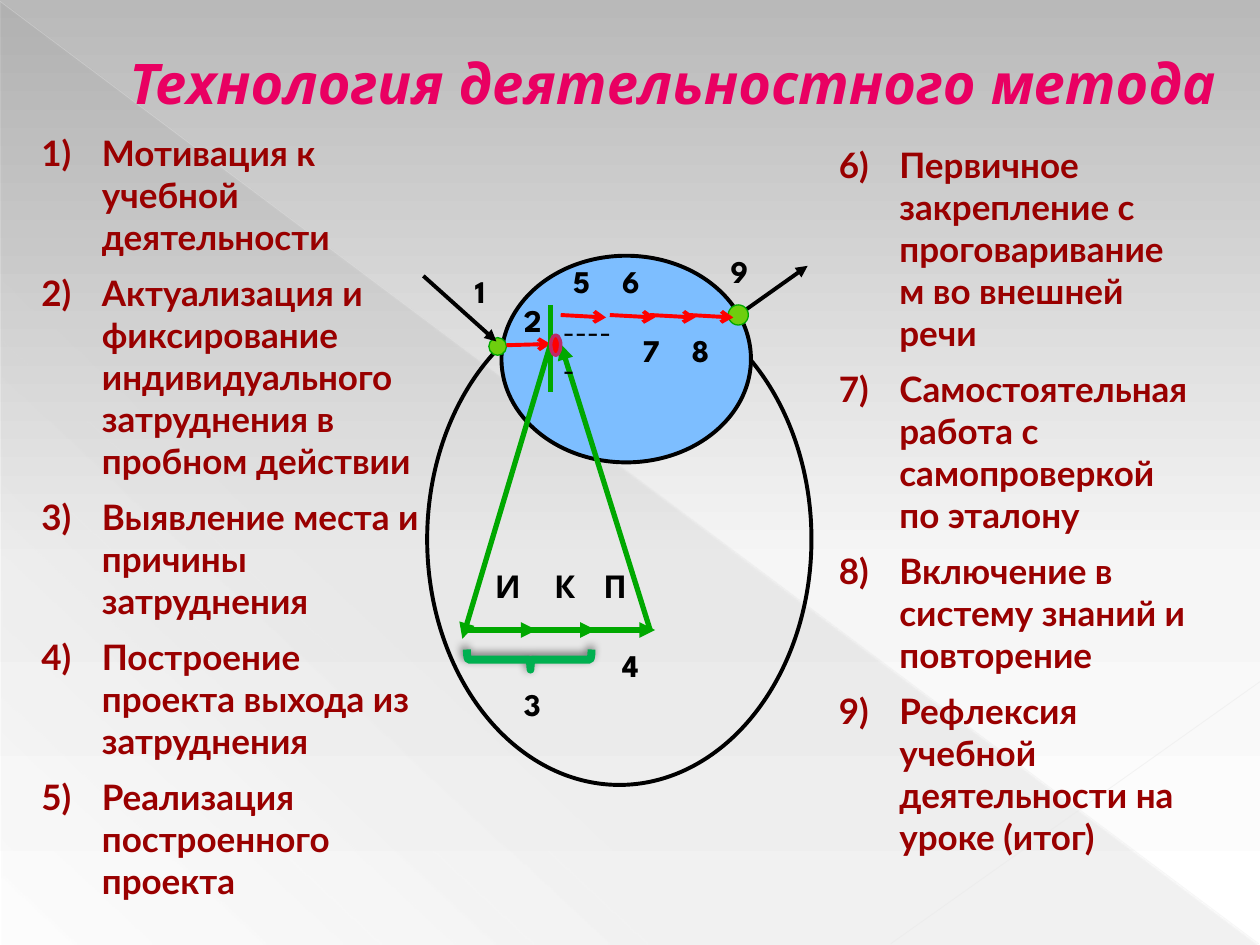
from dataclasses import dataclass

import pptx
import pptx.dml.color
import pptx.enum.dml
import pptx.enum.shapes
import pptx.enum.text
import pptx.oxml
import pptx.oxml.ns
import pptx.util

SCALE = 9144
SHAPE = pptx.enum.shapes.MSO_SHAPE
ANCHOR = pptx.enum.text.MSO_ANCHOR
NS = pptx.oxml.ns.nsdecls("a")


def px(n):
    return pptx.util.Emu(n * SCALE)


def rgb(value):
    return pptx.dml.color.RGBColor.from_string(value)


@dataclass(frozen=True)
class Theme:
    display: str = "League Spartan"
    body: str = "Lato"
    title_size: int = 32
    body_size: int = 20
    label_size: int = 18
    title: str = "E90062"
    text: str = "990000"
    ink: str = "000000"
    blue: str = "7DBEFF"
    lime: str = "6ECE0E"
    green: str = "00A800"
    brace: str = "00B050"
    red: str = "FF0000"
    pink: str = "BD2968"
    shade: str = "666666"
    ray: str = "E8E8E8"
    backdrop: tuple = ((0, "B9B9B9", 100), (60, "F6F6F6", 100), (100, "FFFFFF", 100))


class Board:
    def __init__(self, slide, theme):
        self.s = slide
        self.theme = theme

    def gradient(self, fill, owner, stops, angle):
        fill.gradient()
        grad = owner.find(".//" + pptx.oxml.ns.qn("a:gradFill"))
        gs = "".join(
            f'<a:gs pos="{pos * 1000}"><a:srgbClr val="{color}">'
            f'<a:alpha val="{alpha * 1000}"/></a:srgbClr></a:gs>'
            for pos, color, alpha in stops
        )
        grad.getparent().replace(grad, pptx.oxml.parse_xml(
            f'<a:gradFill {NS} rotWithShape="1"><a:gsLst>{gs}</a:gsLst>'
            f'<a:lin ang="{angle * 60000}" scaled="0"/></a:gradFill>'))

    def background(self):
        self.gradient(self.s.background.fill, self.s._element, self.theme.backdrop, 90)

    def shape(self, kind, x, y, w, h, fill=None, line=None, weight=1):
        sp = self.s.shapes.add_shape(kind, px(x), px(y), px(w), px(h))
        sp.shadow.inherit = False
        if fill:
            sp.fill.solid()
            sp.fill.fore_color.rgb = rgb(fill)
        else:
            sp.fill.background()
        if line:
            sp.line.color.rgb = rgb(line)
            sp.line.width = pptx.util.Pt(weight)
        else:
            sp.line.fill.background()
        return sp

    def line(self, x1, y1, x2, y2, color, weight, tail=None, alpha=None):
        c = self.s.shapes.add_connector(
            pptx.enum.shapes.MSO_CONNECTOR.STRAIGHT, px(x1), px(y1), px(x2), px(y2))
        c.line.color.rgb = rgb(color)
        c.line.width = pptx.util.Pt(weight)
        ln = c.line._get_or_add_ln()
        if alpha:
            ln.find(".//" + pptx.oxml.ns.qn("a:srgbClr")).append(
                pptx.oxml.parse_xml(f'<a:alpha {NS} val="{alpha * 1000}"/>'))
        if tail:
            ln.append(pptx.oxml.parse_xml(f'<a:tailEnd {NS} type="{tail}"/>'))
        c._element.spPr.append(pptx.oxml.parse_xml(f"<a:effectLst {NS}/>"))

    def run(self, p, text, font, size, color, bold=True, italic=False):
        r = p.add_run()
        r.text = text
        r.font.name = font
        r.font.size = pptx.util.Pt(size)
        r.font.bold = bold
        r.font.italic = italic
        r.font.color.rgb = rgb(color)

    def box(self, x, y, w, h, anchor=ANCHOR.TOP):
        tf = self.s.shapes.add_textbox(px(x), px(y), px(w), px(h)).text_frame
        tf.word_wrap = True
        tf.vertical_anchor = anchor
        return tf

    def label(self, text, x, y, w=31, bold=True):
        t = self.theme
        p = self.box(x, y, w, 40).paragraphs[0]
        self.run(p, text, t.display, t.label_size, t.ink, bold)

    def steps(self, items, first, x, y, w, h, anchor):
        t = self.theme
        tf = self.box(x, y, w, h, anchor)
        for i, item in enumerate(items):
            p = tf.add_paragraph() if i else tf.paragraphs[0]
            p.space_before = pptx.util.Pt(8 if i else 0)
            pPr = p._p.get_or_add_pPr()
            pPr.set("marL", str(px(48)))
            pPr.set("indent", str(px(-48)))
            self.run(p, f"{first + i})\t{item}", t.body, t.body_size, t.text)

    def title(self, text, x, y, w, h):
        t = self.theme
        sp = self.s.shapes.title
        sp.left, sp.top, sp.width, sp.height = px(x), px(y), px(w), px(h)
        self.s.shapes._spTree.append(sp._element)
        tf = sp.text_frame
        tf.word_wrap = True
        tf.auto_size = pptx.enum.text.MSO_AUTO_SIZE.NONE
        tf.vertical_anchor = ANCHOR.MIDDLE
        p = tf.paragraphs[0]
        p.alignment = pptx.enum.text.PP_ALIGN.CENTER
        p._p.get_or_add_pPr().set("marL", str(px(53)))
        self.run(p, text, t.display, t.title_size, t.title, italic=True)

    def brace(self, x, y, w, h):
        sp = self.shape(SHAPE.RIGHT_BRACE, x, y, w, h, line=self.theme.brace, weight=4.5)
        sp.rotation = 90
        sp.adjustments[0] = 0.08
        sp.adjustments[1] = 0.49
        sp._element.spPr.find(pptx.oxml.ns.qn("a:effectLst")).append(pptx.oxml.parse_xml(
            f'<a:outerShdw {NS} blurRad="{pptx.util.Pt(5)}" dist="{pptx.util.Pt(2)}" '
            f'dir="{245 * 60000}"><a:srgbClr val="{self.theme.ink}">'
            '<a:alpha val="50000"/></a:srgbClr></a:outerShdw>'))


def main():
    prs = pptx.Presentation()
    prs.slide_width, prs.slide_height = px(1000), px(750)
    t = Theme()
    b = Board(prs.slides.add_slide(prs.slide_layouts[5]), t)

    b.background()
    sp = b.shape(SHAPE.RIGHT_TRIANGLE, 1, 2, 998, 748)
    b.gradient(sp.fill, sp._element.spPr,
               ((0, t.shade, 10), (70, t.shade, 8), (100, t.shade, 1)), 133)
    b.line(0, 1, 999, 749, t.ray, 0.39, alpha=35)
    b.line(1000, 541, 707, 749, t.ray, 0.47, alpha=45)
    b.title("Технология деятельностного метода", 31, 29, 953, 72)

    b.shape(SHAPE.OVAL, 339, 233, 305, 390, line=t.ink, weight=2.25)
    b.shape(SHAPE.OVAL, 398, 203, 198, 164, t.blue, t.ink, 2.25)
    b.shape(SHAPE.OVAL, 388, 268, 14, 14, t.lime, t.green, 0.75)
    b.line(402, 274, 437, 273, t.red, 2.25, "arrow")
    b.line(437, 242, 437, 311, t.green, 3)
    b.line(437, 273, 367, 507, t.green, 3, "triangle")
    b.line(516, 500, 445, 273, t.green, 3, "triangle")
    for x in range(367, 462, 47):
        b.line(x, 500, x + 59, 500, t.green, 3, "triangle")
    for x in (445, 484, 516):
        b.line(x, 250, x + 36, 252, t.red, 2.25, "arrow")
    b.label("-----", 437, 242, 67, bold=False)
    b.brace(412, 474, 16, 99)
    b.line(586, 250, 641, 211, t.ink, 2.25, "triangle")
    b.line(336, 219, 394, 271, t.ink, 2.25, "triangle")
    b.shape(SHAPE.OVAL, 578, 242, 16, 16, t.lime, t.green, 0.75)
    b.line(547, 250, 582, 252, t.red, 2.25, "arrow")

    for text, x, y in (("1", 367, 211), ("2", 406, 234), ("3", 406, 539),
                       ("4", 484, 508), ("5", 445, 203), ("6", 484, 203),
                       ("7", 500, 258), ("8", 539, 258), ("9", 570, 195),
                       ("И", 383, 445), ("К", 430, 445), ("П", 469, 445)):
        b.label(text, x, y, 40)
    b.shape(SHAPE.FLOWCHART_CONNECTOR, 437, 266, 8, 16, t.red, t.pink, 2)

    b.steps(("Мотивация к учебной деятельности",
             "Актуализация и фиксирование индивидуального затруднения в пробном действии",
             "Выявление места и причины затруднения",
             "Построение проекта выхода из затруднения",
             "Реализация построенного проекта"),
            1, 23, 109, 328, 602, ANCHOR.MIDDLE)
    b.steps(("Первичное закрепление с проговариванием во внешней речи",
             "Самостоятельная работа с самопроверкой по эталону",
             "Включение в систему знаний и повторение",
             "Рефлексия учебной деятельности на уроке (итог)"),
            6, 656, 109, 297, 559, ANCHOR.TOP)

    prs.save("out.pptx")


if __name__ == "__main__":
    main()
